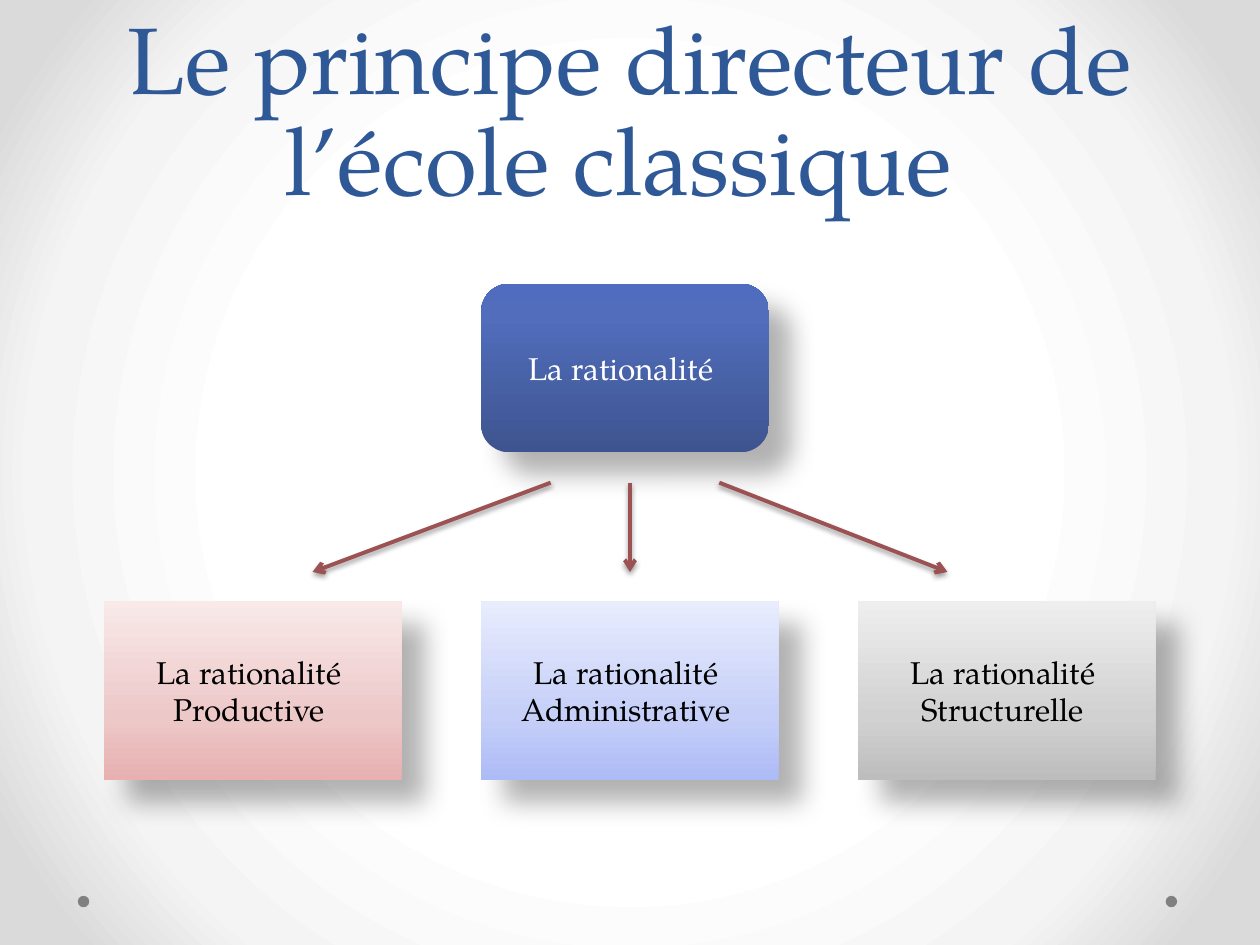
from dataclasses import dataclass

from lxml import etree
from pptx import Presentation
from pptx.dml.color import RGBColor
from pptx.enum.shapes import MSO_CONNECTOR, MSO_SHAPE
from pptx.enum.text import MSO_ANCHOR, PP_ALIGN
from pptx.oxml.ns import qn
from pptx.util import Cm, Pt

ROUNDED, RECT, OVAL = MSO_SHAPE.ROUNDED_RECTANGLE, MSO_SHAPE.RECTANGLE, MSO_SHAPE.OVAL
STRAIGHT = MSO_CONNECTOR.STRAIGHT
CENTER, MIDDLE, BOTTOM = PP_ALIGN.CENTER, MSO_ANCHOR.MIDDLE, MSO_ANCHOR.BOTTOM

FONT = "TeX Gyre Pagella"
COLORS = {
    "title": "2F5897",
    "dark text": "000000",
    "light text": "FFFFFF",
    "arrow": "9C5252",
    "dot": "808080",
    "shadow": "000000",
}
# Gradient stops: position in percent, colour
GRADIENTS = {
    "background": [(50, "FFFFFF"), (76, "F4F4F4"), (92, "DADADA")],
    "navy": [(0, "3E5490"), (80, "516DBB"), (100, "4F6CBE")],
    "rose": [(0, "E8B0B0"), (35, "EDC8C8"), (100, "F9E9E9")],
    "blue": [(0, "ADBBF6"), (35, "C5CFF8"), (100, "E8ECFD")],
    "grey": [(0, "BDBDBD"), (35, "D1D1D1"), (100, "EEEEEE")],
}


@dataclass
class Shadow:
    alpha: int
    blur: float
    distance: float
    angle: int


@dataclass
class Box:
    lines: list[str]
    gradient: str
    left: float
    top: float
    width: float = 6
    height: float = 3.6
    preset: int = RECT
    text_color: str = "dark text"


@dataclass
class Arrow:
    start_x: float
    end_x: float


BOX_SHADOW = Shadow(30, 15, 18, 45)
ARROW_SHADOW = Shadow(38, 3.1, 1.6, 90)
BRANCH_LEFT, BRANCH_STEP, BRANCH_TOP = 2.1, 7.6, 12.12
ARROW_TOP, ARROW_BOTTOM = 9.73, 11.53
DOT_SIZE, DOT_TOP = 0.23, 18.06

ROOT = Box(["La rationalité "], "navy", BRANCH_LEFT + BRANCH_STEP, 5.72, 5.8, 3.4,
           ROUNDED, "light text")
BRANCHES = [
    Box(["La rationalité ", kind], gradient, BRANCH_LEFT + i * BRANCH_STEP, BRANCH_TOP)
    for i, (kind, gradient) in enumerate(
        [("Productive ", "rose"), ("Administrative ", "blue"), ("Structurelle ", "grey")])
]
ARROWS = [Arrow(11.1, 6.3), Arrow(12.7, 12.7), Arrow(14.5, 19.1)]


def rgb(name: str) -> RGBColor:
    return RGBColor.from_string(COLORS[name])


def add_node(parent, tag: str, **attributes):
    return etree.SubElement(parent, qn(tag), {k: str(v) for k, v in attributes.items()})


def set_gradient(fill, holder, name: str, radial: bool = False) -> None:
    fill.gradient()
    gradient = holder.find(qn("a:gradFill"))
    for child in list(gradient):
        gradient.remove(child)
    stops = add_node(gradient, "a:gsLst")
    for position, color in GRADIENTS[name]:
        stop = add_node(stops, "a:gs", pos=position * 1000)
        add_node(stop, "a:srgbClr", val=color)
    if radial:
        circle = add_node(gradient, "a:path", path="circle")
        add_node(circle, "a:fillToRect", l=50000, t=50000, r=50000, b=50000)
    else:
        add_node(gradient, "a:lin", ang=270 * 60000, scaled=0)


def add_shadow(properties, shadow: Shadow) -> None:
    effects = add_node(properties, "a:effectLst")
    outer = add_node(effects, "a:outerShdw", blurRad=Pt(shadow.blur),
                     dist=Pt(shadow.distance), dir=shadow.angle * 60000,
                     algn="tl", rotWithShape=0)
    color = add_node(outer, "a:srgbClr", val=COLORS["shadow"])
    add_node(color, "a:alpha", val=shadow.alpha * 1000)


def write_text(frame, lines: list[str], size: float, color: str, anchor,
               line_spacing=None) -> None:
    for key, value in {"word_wrap": True, "vertical_anchor": anchor}.items():
        setattr(frame, key, value)
    for i, line in enumerate(lines):
        paragraph = frame.paragraphs[0] if i == 0 else frame.add_paragraph()
        for key, value in {"alignment": CENTER, "line_spacing": line_spacing}.items():
            setattr(paragraph, key, value)
        run = paragraph.add_run()
        run.text = line
        for key, value in {"name": FONT, "size": Pt(size)}.items():
            setattr(run.font, key, value)
        run.font.color.rgb = rgb(color)


def draw_box(slide, box: Box) -> None:
    shape = slide.shapes.add_shape(box.preset, Cm(box.left), Cm(box.top),
                                   Cm(box.width), Cm(box.height))
    properties = shape._element.spPr
    set_gradient(shape.fill, properties, box.gradient)
    shape.line.fill.background()
    add_shadow(properties, BOX_SHADOW)
    write_text(shape.text_frame, box.lines, 18, box.text_color, MIDDLE)


def draw_arrow(slide, arrow: Arrow) -> None:
    connector = slide.shapes.add_connector(STRAIGHT, Cm(arrow.start_x), Cm(ARROW_TOP),
                                           Cm(arrow.end_x), Cm(ARROW_BOTTOM))
    connector.line.color.rgb = rgb("arrow")
    connector.line.width = Pt(2.25)
    properties = connector._element.spPr
    add_node(properties.find(qn("a:ln")), "a:tailEnd", type="arrow")
    add_shadow(properties, ARROW_SHADOW)


def draw_dot(slide, left: float) -> None:
    dot = slide.shapes.add_shape(OVAL, Cm(left), Cm(DOT_TOP), Cm(DOT_SIZE), Cm(DOT_SIZE))
    dot.fill.solid()
    dot.fill.fore_color.rgb = rgb("dot")
    dot.line.fill.background()
    dot.shadow.inherit = False


def main() -> None:
    deck = Presentation()
    deck.slide_width, deck.slide_height = Cm(25.4), Cm(19.05)
    slide = deck.slides.add_slide(deck.slide_layouts[6])

    # Background and footer dots
    background_fill = slide.background.fill
    set_gradient(background_fill, slide._element.find(".//" + qn("p:bgPr")),
                 "background", radial=True)
    for left in (23.5, 1.57):
        draw_dot(slide, left)

    # Title
    title = slide.shapes.add_textbox(Cm(1.27), Cm(0), Cm(22.86), Cm(4.45))
    write_text(title.text_frame, ["Le principe directeur de l’école classique "],
               54, "title", BOTTOM, Pt(58))

    # Principle, its three branches and the arrows between them
    for box in [ROOT, *BRANCHES]:
        draw_box(slide, box)
    for arrow in ARROWS:
        draw_arrow(slide, arrow)

    deck.save("out.pptx")


if __name__ == "__main__":
    main()
